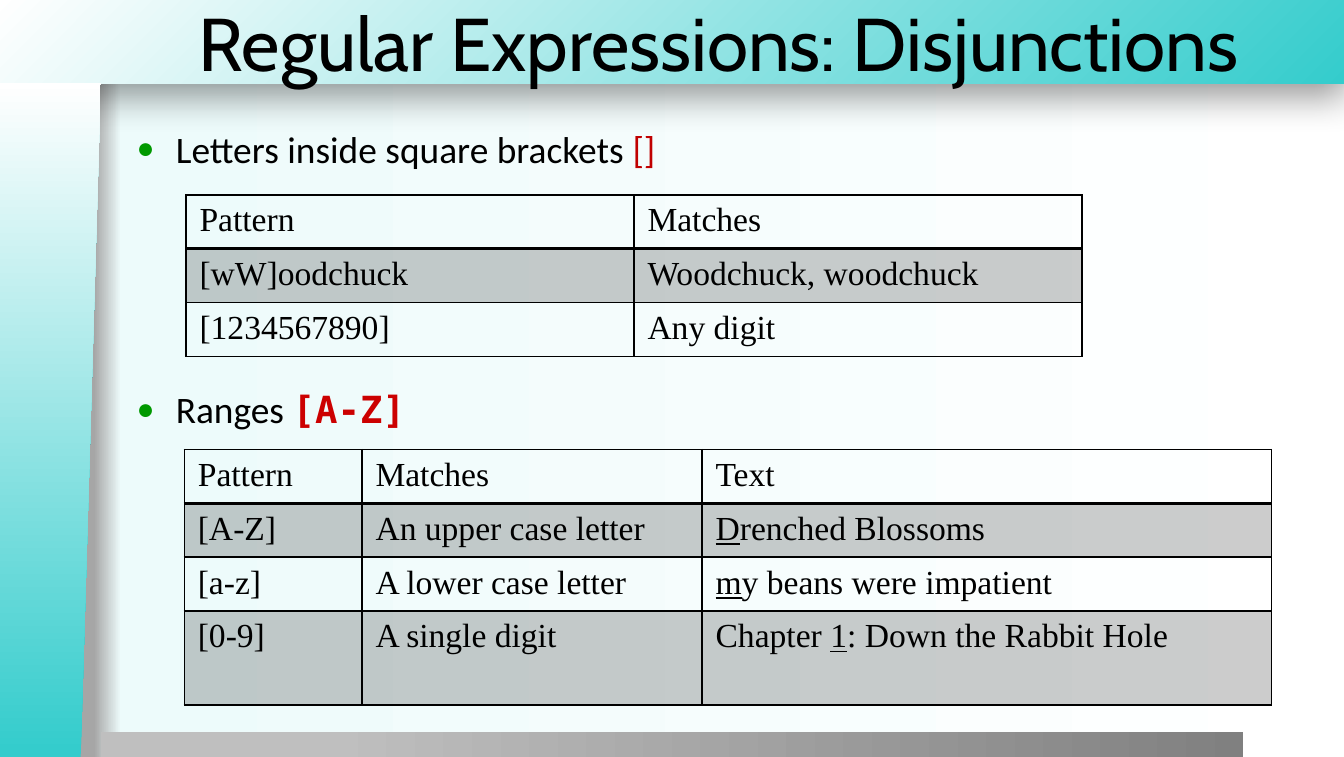
import pptx
import pptx.util
import pptx.dml.color
import pptx.enum.shapes
import pptx.enum.text
import pptx.oxml
import pptx.oxml.ns
import lxml.etree

Pt = pptx.util.Pt
SHAPE = pptx.enum.shapes.MSO_SHAPE
ANCHOR = pptx.enum.text.MSO_ANCHOR
NS = pptx.oxml.ns.nsdecls("a")

SLIDE_WIDTH, SLIDE_HEIGHT = 720, 405.36
COLORS = {
    "ink": "000000", "teal": "34CCCC", "white": "FFFFFF", "mist": "EDFBFB",
    "edge": "A6A6A6", "footer": "808080", "silver": "BFBFBF",
    "bullet": "009900", "bracket": "C00000", "range": "CC0000",
}
LETTER_ROWS = [
    ["Pattern", "Matches"],
    ["[wW]oodchuck", "Woodchuck, woodchuck"],
    ["[1234567890]", "Any digit"],
]
# Underscores enclose the underlined part of a cell
RANGE_ROWS = [
    ["Pattern", "Matches", "Text"],
    ["[A-Z]", "An upper case letter", "_D_renched Blossoms"],
    ["[a-z]", "A lower case letter", "_m_y beans were impatient"],
    ["[0-9]", "A single digit", "Chapter _1_: Down the Rabbit Hole"],
]
# Each bullet: space before, then runs of (text, font, color, bold)
BULLETS = [
    (4, [("Letters inside square brackets ", "Calibri", "ink", False),
         ("[]", "Calibri", "bracket", False)]),
    (115.5, [("Ranges ", "Calibri", "ink", False),
             ("[A-Z]", "DejaVu Sans Mono", "range", True)]),
]


def style(run, font, size, color, bold=False):
    run.font.name, run.font.size, run.font.bold = font, Pt(size), bold
    run.font.color.rgb = pptx.dml.color.RGBColor.from_string(COLORS[color])


def place(shape, box):
    shape.left, shape.top, shape.width, shape.height = (Pt(v) for v in box)


def set_gradient(fill, owner, stops, direction='<a:lin ang="0" scaled="0"/>'):
    """Give owner a gradient of (percent, color) stops."""
    fill.gradient()
    old = owner.xpath(".//a:gradFill")[0]
    marks = "".join(
        f'<a:gs pos="{percent * 1000}"><a:srgbClr val="{COLORS[color]}"/></a:gs>'
        for percent, color in stops)
    new = pptx.oxml.parse_xml(
        f'<a:gradFill {NS} rotWithShape="1"><a:gsLst>{marks}</a:gsLst>{direction}</a:gradFill>')
    old.getparent().replace(old, new)


def add_panel(slide, layer, kind, box, stops, **gradient):
    """Add a borderless gradient panel behind the placeholders."""
    panel = slide.shapes.add_shape(kind, *(Pt(v) for v in box))
    panel.shadow.inherit = False
    panel.line.fill.background()
    set_gradient(panel.fill, panel.element, stops, **gradient)
    slide.shapes.element.insert(2 + layer, panel.element)
    return panel


def add_backdrop(slide, box):
    left, top, width, height = box
    header_height, side_width = 45, 54
    set_gradient(slide.background.fill, slide.element,
                 [(7, "edge"), (9, "mist"), (100, "white")])

    # Header band with its soft shadow
    header = add_panel(
        slide, 0, SHAPE.RECTANGLE, (left - 0.5, top, width + 0.5, header_height),
        [(0, "teal"), (100, "white")],
        direction='<a:path path="circle"><a:fillToRect l="100000" t="100000"/></a:path>')
    effects = header.element.spPr.find(pptx.oxml.ns.qn("a:effectLst"))
    effects.append(pptx.oxml.parse_xml(
        f'<a:outerShdw {NS} blurRad="{Pt(20)}" dist="{Pt(6)}" dir="5400000" algn="t" '
        f'rotWithShape="0"><a:srgbClr val="{COLORS["ink"]}"><a:alpha val="40000"/>'
        '</a:srgbClr></a:outerShdw>'))

    # Footer strip
    add_panel(slide, 1, SHAPE.RECTANGLE,
              (left + side_width, top + height - 13.3, width * 0.85, 14.4),
              [(20, "silver"), (100, "footer")])

    # Slanted side panel, turned upright about its centre
    length = height - header_height + 1
    side_box = (left + (side_width - length) / 2,
                top + header_height + (length - side_width) / 2 - 0.75,
                length, side_width)
    side = add_panel(slide, 2, SHAPE.FLOWCHART_MANUAL_INPUT, side_box,
                     [(1, "teal"), (100, "white")])
    side.rotation = 270
    side.element.spPr.xfrm.set("flipV", "1")


def add_title(slide, box):
    title = slide.shapes.title
    place(title, box)
    frame = title.text_frame
    frame.text = "Regular Expressions: Disjunctions"
    frame.auto_size = pptx.enum.text.MSO_AUTO_SIZE.NONE
    frame.vertical_anchor = ANCHOR.MIDDLE
    heading = frame.paragraphs[0]
    heading.alignment = pptx.enum.text.PP_ALIGN.LEFT
    style(heading.runs[0], "Cabin", 40, "ink")


def add_bullets(slide, box):
    body = slide.placeholders[1]
    place(body, box)
    frame = body.text_frame
    frame.auto_size = pptx.enum.text.MSO_AUTO_SIZE.NONE
    frame.vertical_anchor = ANCHOR.TOP
    for index, (space, parts) in enumerate(BULLETS):
        point = frame.add_paragraph() if index else frame.paragraphs[0]
        point.space_before = Pt(space)
        for text, font, color, bold in parts:
            run = point.add_run()
            run.text = text
            style(run, font, 20, color, bold)
        props = point._p.get_or_add_pPr()
        props.set("marL", str(Pt(21)))
        props.set("indent", str(-Pt(21)))
        for bullet in (f'<a:buClr {NS}><a:srgbClr val="{COLORS["bullet"]}"/></a:buClr>',
                       f'<a:buSzPct {NS} val="80000"/>',
                       f'<a:buChar {NS} char="●"/>'):
            props.append(pptx.oxml.parse_xml(bullet))


def format_cell(cell, text, is_header, shaded):
    # Text
    paragraph = cell.text_frame.paragraphs[0]
    for index, part in enumerate(text.split("_")):
        if part:
            run = paragraph.add_run()
            run.text = part
            style(run, "Times New Roman", 18, "ink")
            run.font.underline = index % 2 == 1
    cell.margin_left = cell.margin_right = Pt(7.2)
    cell.margin_top = cell.margin_bottom = Pt(3.6)

    # Fill
    props = cell._tc.get_or_add_tcPr()
    if shaded:
        cell.fill.solid()
        cell.fill.fore_color.rgb = pptx.dml.color.RGBColor.from_string(COLORS["ink"])
        tint = props.xpath("./a:solidFill/a:srgbClr")[0]
        lxml.etree.SubElement(tint, pptx.oxml.ns.qn("a:alpha")).set("val", "20000")
    else:
        cell.fill.background()

    # Borders, heavier under the header
    widths = {"lnL": 1, "lnR": 1, "lnT": 1, "lnB": 2 if is_header else 1}
    for position, (side, width) in enumerate(widths.items()):
        props.insert(position, pptx.oxml.parse_xml(
            f'<a:{side} {NS} w="{Pt(width)}"><a:solidFill>'
            f'<a:srgbClr val="{COLORS["ink"]}"/></a:solidFill></a:{side}>'))


def add_pattern_table(slide, box, rows, column_widths, row_heights):
    table = slide.shapes.add_table(
        len(rows), len(column_widths), *(Pt(v) for v in box)).table
    table.first_row = table.horz_banding = False
    for column, width in zip(table.columns, column_widths):
        column.width = Pt(width)
    for r, (texts, height) in enumerate(zip(rows, row_heights)):
        table.rows[r].height = Pt(height)
        for c, text in enumerate(texts):
            format_cell(table.cell(r, c), text, r == 0, r % 2 == 1)


def main():
    deck = pptx.Presentation()
    deck.slide_width, deck.slide_height = Pt(SLIDE_WIDTH), Pt(SLIDE_HEIGHT)
    slide = deck.slides.add_slide(deck.slide_layouts[1])

    add_backdrop(slide, (0, 0, SLIDE_WIDTH, SLIDE_HEIGHT))
    add_title(slide, (99, 0, 621, 45))
    add_bullets(slide, (66, 63.8, 565, 174))
    add_pattern_table(slide, (99.7, 104.4, 480, 86.4), LETTER_ROWS,
                      [240, 240], [28.8] * 3)
    add_pattern_table(slide, (98.8, 240.8, 582.5, 136.8), RANGE_ROWS,
                      [95.2, 182.2, 305.1], [28.8] * 3 + [50.4])
    deck.save("out.pptx")


if __name__ == "__main__":
    main()
